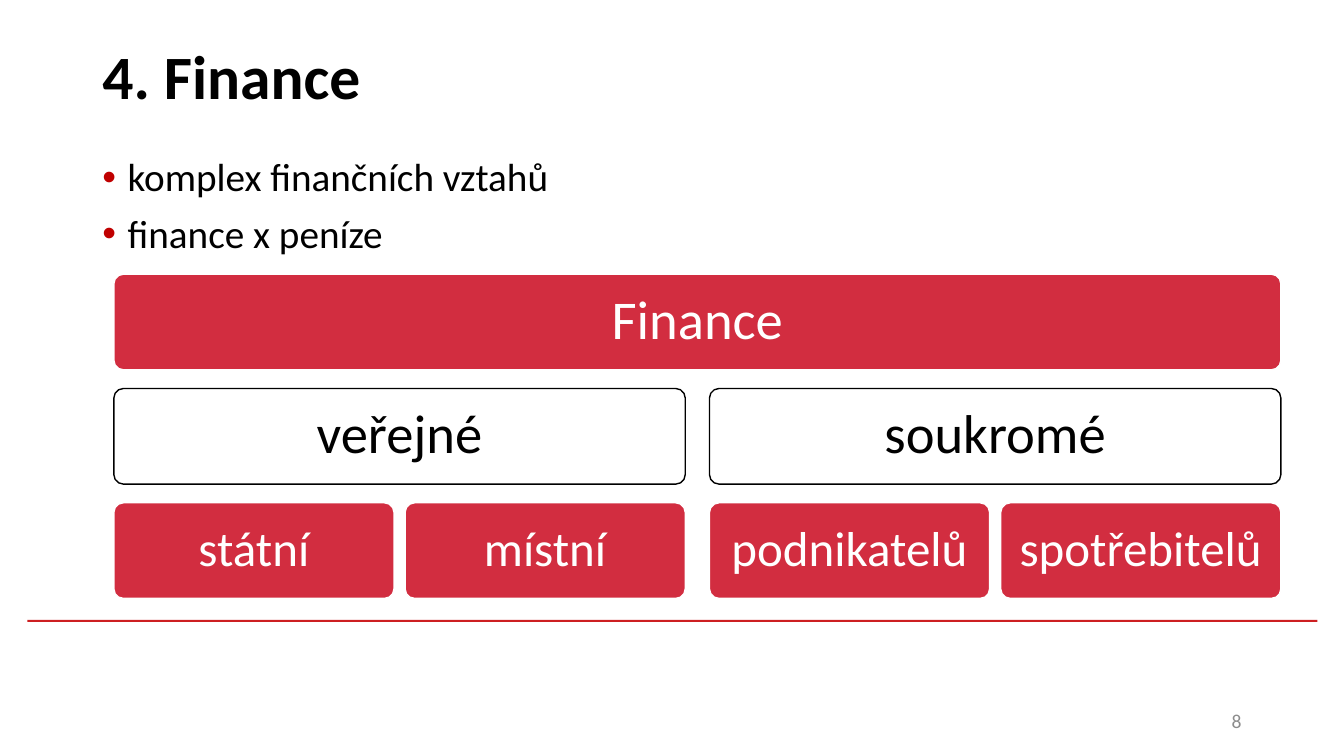
"""Build the Finance slide with its three-level diagram."""
from lxml import etree
from pptx import Presentation
from pptx.dml.color import RGBColor
from pptx.enum.shapes import MSO_SHAPE
from pptx.enum.text import MSO_ANCHOR, PP_ALIGN
from pptx.oxml.ns import qn
from pptx.util import Cm, Pt

ROUNDED, RECTANGLE = MSO_SHAPE.ROUNDED_RECTANGLE, MSO_SHAPE.RECTANGLE
TOP, MIDDLE = MSO_ANCHOR.TOP, MSO_ANCHOR.MIDDLE
LEFT, CENTER, RIGHT = PP_ALIGN.LEFT, PP_ALIGN.CENTER, PP_ALIGN.RIGHT

FONT = "Calibri"
COLORS = {
    "black": "000000",
    "white": "FFFFFF",
    "red": "D22D40",
    "rule": "CD1F21",
    "bullet": "C00000",
    "gray": "8C8C8C",
}
BRANCHES = [
    ("veřejné", ["státní", "místní"]),
    ("soukromé", ["podnikatelů", "spotřebitelů"]),
]


def color(name):
    """Return the named colour."""
    return RGBColor.from_string(COLORS[name])


def add_span(para, text, size, color_name, bold=False):
    """Add one formatted run to a paragraph."""
    span = para.add_run()
    span.text = text
    span.font.name = FONT
    span.font.size = Pt(size)
    span.font.bold = bold
    span.font.color.rgb = color(color_name)


def add_text_box(page, box, anchor):
    """Add an empty wrapping text box and return its frame."""
    frame = page.shapes.add_textbox(*map(Cm, box)).text_frame
    frame.word_wrap = True
    frame.vertical_anchor = anchor
    return frame


def add_line_of_text(page, box, text, size, color_name, align, bold=False):
    """Add a single vertically centred line such as the title."""
    para = add_text_box(page, box, MIDDLE).paragraphs[0]
    para.alignment = align
    add_span(para, text, size, color_name, bold)


def add_bullet(para):
    """Give a paragraph a hanging coloured bullet."""
    properties = para._p.get_or_add_pPr()
    properties.set("marL", str(Cm(0.64)))
    properties.set("indent", str(-Cm(0.64)))
    tint = etree.SubElement(properties, qn("a:buClr"))
    etree.SubElement(tint, qn("a:srgbClr"), val=COLORS["bullet"])
    etree.SubElement(properties, qn("a:buFont"), typeface="Arial")
    etree.SubElement(properties, qn("a:buChar"), char="•")


def add_bullets(page, box, texts):
    """Add the bulleted list."""
    frame = add_text_box(page, box, TOP)
    for index, text in enumerate(texts):
        para = frame.add_paragraph() if index else frame.paragraphs[0]
        add_bullet(para)
        para.line_spacing = 0.9
        para.space_before = Pt(10 if index else 0)
        add_span(para, text, 28, "black")


def add_rule(page, box):
    """Add the thin red rule."""
    rule = page.shapes.add_shape(RECTANGLE, *map(Cm, box))
    rule.shadow.inherit = False
    rule.fill.solid()
    rule.fill.fore_color.rgb = color("rule")
    rule.line.fill.background()


def add_node(page, box, text, size, fill, ink):
    """Add one rounded diagram node, outlined in its text colour."""
    node = page.shapes.add_shape(ROUNDED, *map(Cm, box))
    node.adjustments[0] = 0.1
    node.shadow.inherit = False
    node.fill.solid()
    node.fill.fore_color.rgb = color(fill)
    node.line.color.rgb = color(ink)
    node.line.width = Pt(1)
    frame = node.text_frame
    frame.word_wrap = True
    frame.vertical_anchor = MIDDLE
    frame.margin_left = frame.margin_right = Cm(0.3)
    para = frame.paragraphs[0]
    para.alignment = CENTER
    para.line_spacing = 0.9
    add_span(para, text, size, ink)


def split(left, width, count, gap):
    """Return the left edges and shared width of equal columns."""
    column = (width - gap * (count - 1)) / count
    return [left + index * (column + gap) for index in range(count)], column


def add_diagram(page, box, root, branches):
    """Add the root, its branches and their leaves in three rows."""
    left, top, width, height = box
    row_gap = 0.47
    row = (height - 2 * row_gap) / 3
    root_top, branch_top, leaf_top = [top + i * (row + row_gap) for i in range(3)]
    add_node(page, (left, root_top, width, row), root, 39, "red", "white")
    branch_lefts, branch_width = split(left, width, len(branches), 0.61)
    for branch_left, (branch, leaves) in zip(branch_lefts, branches):
        branch_box = (branch_left, branch_top, branch_width, row)
        add_node(page, branch_box, branch, 39, "white", "black")
        leaf_lefts, leaf_width = split(branch_left, branch_width, len(leaves), 0.28)
        for leaf_left, leaf in zip(leaf_lefts, leaves):
            leaf_box = (leaf_left, leaf_top, leaf_width, row)
            add_node(page, leaf_box, leaf, 35, "red", "white")


def add_finance_slide(deck):
    """Add the slide and place its regions."""
    page = deck.slides.add_slide(deck.slide_layouts[6])
    add_rule(page, (0.69, 15.62, 32.51, 0.05))
    add_line_of_text(page, (2.33, 0.05, 29.21, 3.68), "4. Finance", 44, "black", LEFT, True)
    add_bullets(page, (2.33, 3.86, 29.21, 3), ["komplex finančních vztahů", "finance x peníze"])
    add_line_of_text(page, (23.92, 17.65, 7.62, 1.02), "8", 14, "gray", RIGHT)
    add_diagram(page, (2.87, 6.91, 29.41, 8.17), "Finance", BRANCHES)


def main():
    """Create and save the deck."""
    deck = Presentation()
    deck.slide_width, deck.slide_height = Cm(33.87), Cm(19.05)
    add_finance_slide(deck)
    deck.save("out.pptx")


if __name__ == "__main__":
    main()
